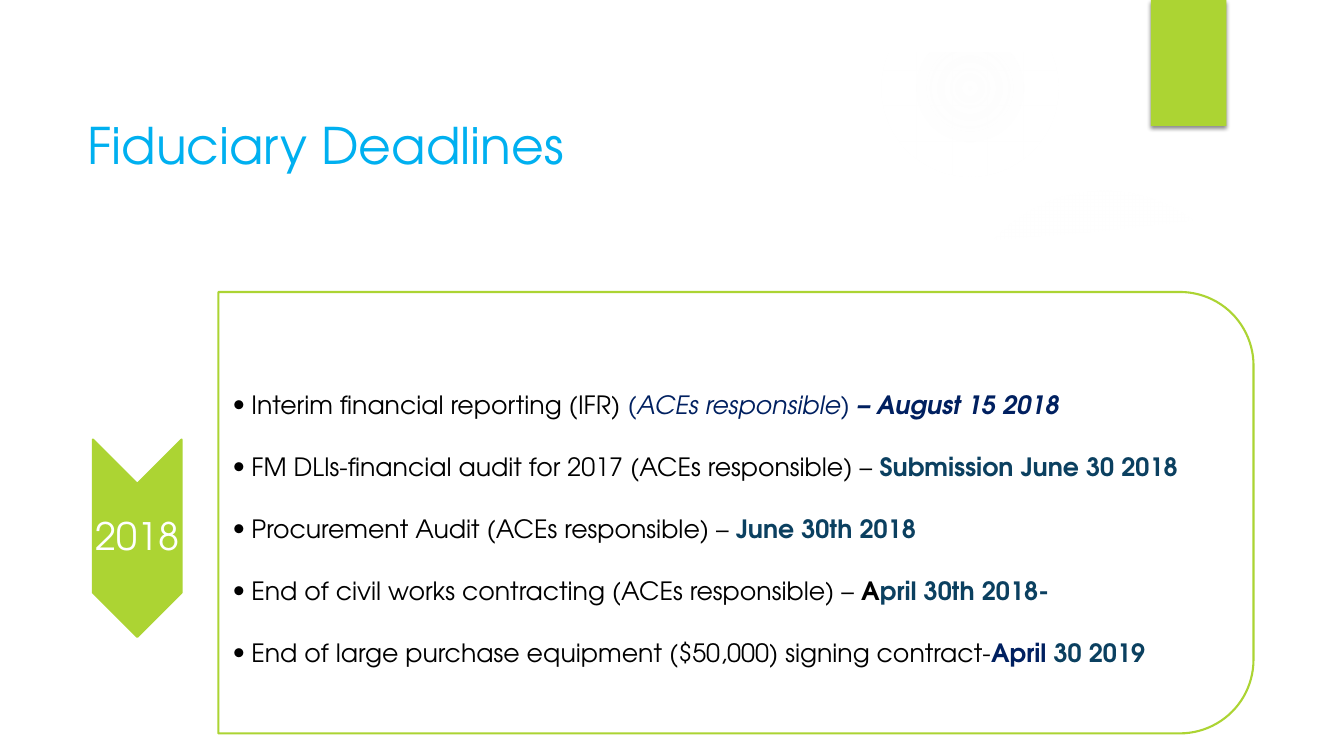
from dataclasses import dataclass

from lxml.etree import SubElement
from pptx import Presentation
from pptx.dml.color import RGBColor
from pptx.enum.shapes import MSO_SHAPE as Shape
from pptx.enum.text import MSO_ANCHOR as Anchor, PP_ALIGN as Align
from pptx.oxml.ns import qn
from pptx.util import Pt


@dataclass(frozen=True)
class Theme:
    font: str = "TeX Gyre Adventor"
    white: str = "FFFFFF"
    mist: str = "F7F7F7"
    black: str = "000000"
    lime: str = "ACD433"
    sky: str = "00B0F0"
    navy: str = "002060"
    teal: str = "0B4060"
    title_size: float = 36
    year_size: float = 27
    body_size: float = 18


theme = Theme()

deck = Presentation()
deck.slide_width, deck.slide_height = Pt(960), Pt(540)
slide = deck.slides.add_slide(deck.slide_layouts[6])


def add_block(kind, box, fill, line=None, rotation=0):
    block = slide.shapes.add_shape(kind, *map(Pt, box))
    block.shadow.inherit = False
    block.rotation = rotation
    block.fill.solid()
    block.fill.fore_color.rgb = RGBColor.from_string(fill)
    if line:
        block.line.color.rgb = RGBColor.from_string(line)
        block.line.width = Pt(1.5)
    else:
        block.line.fill.background()
    return block


def add_run(paragraph, text, size, color, bold=False, italic=False):
    run = paragraph.add_run()
    run.text = text
    style = {"name": theme.font, "size": Pt(size), "bold": bold, "italic": italic}
    for key, value in style.items():
        setattr(run.font, key, value)
    run.font.color.rgb = RGBColor.from_string(color)


# Faint round glows: left, top, diameter, then (stop, opacity) in percent
glows = [
    (0, 210, 330, [(0, 11), (36, 10), (75, 0)]),
    (0, 228, 186, [(0, 8), (36, 8), (72, 0)]),
    (677.5, 132, 222, [(0, 7), (36, 6), (69, 0)]),
    (630, 0, 126, [(0, 14), (36, 7), (73, 0)]),
    (677.5, 462, 78, [(0, 14), (36, 7), (66, 0)]),
]
for left, top, size, stops in glows:
    glow = add_block(Shape.OVAL, (left, top, size, size), theme.mist)
    glow.fill.gradient()
    gradient = glow._element.spPr.find(qn("a:gradFill"))
    for child in list(gradient):
        gradient.remove(child)
    stop_list = SubElement(gradient, qn("a:gsLst"))
    for position, opacity in stops:
        stop = SubElement(stop_list, qn("a:gs"), pos=str(position * 1000))
        tint = SubElement(stop, qn("a:srgbClr"), val=theme.mist)
        SubElement(tint, qn("a:alpha"), val=str(opacity * 1000))
    spread = SubElement(gradient, qn("a:path"), path="circle")
    SubElement(spread, qn("a:fillToRect"), l="50000", t="50000", r="50000", b="50000")

# White paper: a tilted sliver, a sheet with a sagging top edge, an outer frame
sliver = [(672.5, 180), (760, 174.5), (850, 164), (928, 154), (923.8, 119.5),
          (881.5, 133.2), (840, 144.5), (798.5, 153.9), (757.5, 162), (719.5, 168.5), (669.6, 175)]
sheet = [(36, 147), (36, 504), (924.2, 504), (924.2, 147), (864, 156.2),
         (783.5, 165.6), (703, 172), (624, 176.4), (547, 178.2), (473, 178.5),
         (402.5, 177), (319.7, 173.5), (231, 167.8), (155.5, 161), (81.4, 152.6)]
border = [(0, 0), (0, 540), (960, 540), (960, 0)]
opening = [(922.3, 502.6), (37.4, 502.6), (37.4, 37.4), (922.3, 37.4)]
papers = [([sliver], 350.2, 20), ([sheet], 0, 100), ([border, opening], 0, 100)]
for outlines, tilt, opacity in papers:
    builder = slide.shapes.build_freeform(*map(Pt, outlines[0][0]))
    for number, outline in enumerate(outlines):
        corners = [(Pt(x), Pt(y)) for x, y in outline]
        if number:
            builder.move_to(*corners[0])
        builder.add_line_segments(corners[1:], close=True)
    paper = builder.convert_to_shape()
    paper.shadow.inherit = False
    paper.rotation = tilt
    paper.fill.solid()
    paper.fill.fore_color.rgb = RGBColor.from_string(theme.white)
    paper.line.fill.background()
    if opacity < 100:
        paper_color = paper._element.spPr.find(qn("a:solidFill"))[0]
        SubElement(paper_color, qn("a:alpha"), val=str(opacity * 1000))

# Corner tab with a soft shadow below it
tab = add_block(Shape.RECTANGLE, (822, 0, 54, 90), theme.lime)
effects = tab._element.spPr.find(qn("a:effectLst"))
shadow = SubElement(effects, qn("a:outerShdw"), blurRad=str(Pt(3)),
                    dist=str(Pt(2)), dir="5400000", rotWithShape="0")
shadow_color = SubElement(shadow, qn("a:srgbClr"), val=theme.black)
SubElement(shadow_color, qn("a:alpha"), val="45000")

# Year arrow and deadline panel, both turned a quarter
add_block(Shape.CHEVRON, (27.5, 352.8, 141, 63.4), theme.lime, theme.lime, 90)
add_block(Shape.ROUND_2_SAME_RECTANGLE, (368, -3.5, 315.3, 739.4),
          theme.white, theme.lime, 90)

# Text frames: box, insets (left, top, right, bottom), wrap
frames = {
    "title": ((55.2, 58, 815.8, 90), (7.2, 3.6, 7.2, 3.6), True),
    "year": ((66.4, 345.6, 63.4, 77.8), (1.4, 1.4, 1.4, 1.4), False),
    "deadlines": ((156, 247.4, 724.3, 263), (10.1, 0.7, 0.7, 0.7), True),
}
texts = {}
for part, (box, insets, wrap) in frames.items():
    frame = slide.shapes.add_textbox(*map(Pt, box)).text_frame
    sides = ("margin_left", "margin_top", "margin_right", "margin_bottom")
    layout = {side: Pt(inset) for side, inset in zip(sides, insets)}
    layout.update(word_wrap=wrap, vertical_anchor=Anchor.MIDDLE)
    for key, value in layout.items():
        setattr(frame, key, value)
    texts[part] = frame

# Title and year
add_run(texts["title"].paragraphs[0], "Fiduciary Deadlines",
        theme.title_size, theme.sky)
year = texts["year"].paragraphs[0]
year.alignment = Align.CENTER
year.line_spacing = 0.9
add_run(year, "2018", theme.year_size, theme.white)

# Deadlines: the task, then runs of (text, colour, bold, italic)
deadlines = [
    ("Interim financial reporting (IFR) ",
     [("(ACEs responsible) ", theme.navy, False, True),
      ("– August 15 2018", theme.navy, True, True)]),
    ("FM DLIs-financial audit for 2017 (ACEs responsible) – ",
     [("Submission June 30 2018", theme.teal, True)]),
    ("Procurement Audit (ACEs responsible) – ",
     [("June 30th 2018", theme.teal, True)]),
    ("End of civil works contracting (ACEs responsible) – ",
     [("A", theme.black, True), ("pril 30th 2018-", theme.teal, True)]),
    ("End of large purchase equipment ($50,000) signing contract-",
     [("April ", theme.navy, True), ("30 2019", theme.teal, True)]),
]
for index, (task, dates) in enumerate(deadlines):
    item = texts["deadlines"].paragraphs[0] if index == 0 else texts["deadlines"].add_paragraph()
    item.line_spacing = 0.9
    item.space_before = Pt(24.8 if index else 0)
    properties = item._p.get_or_add_pPr()
    properties.set("marL", str(Pt(13.5)))
    properties.set("indent", str(-Pt(13.5)))
    SubElement(properties, qn("a:buFont"), typeface=theme.font)
    SubElement(properties, qn("a:buChar"), char="•")
    add_run(item, task, theme.body_size, theme.black)
    for text, *look in dates:
        add_run(item, text, theme.body_size, *look)

deck.save("out.pptx")
